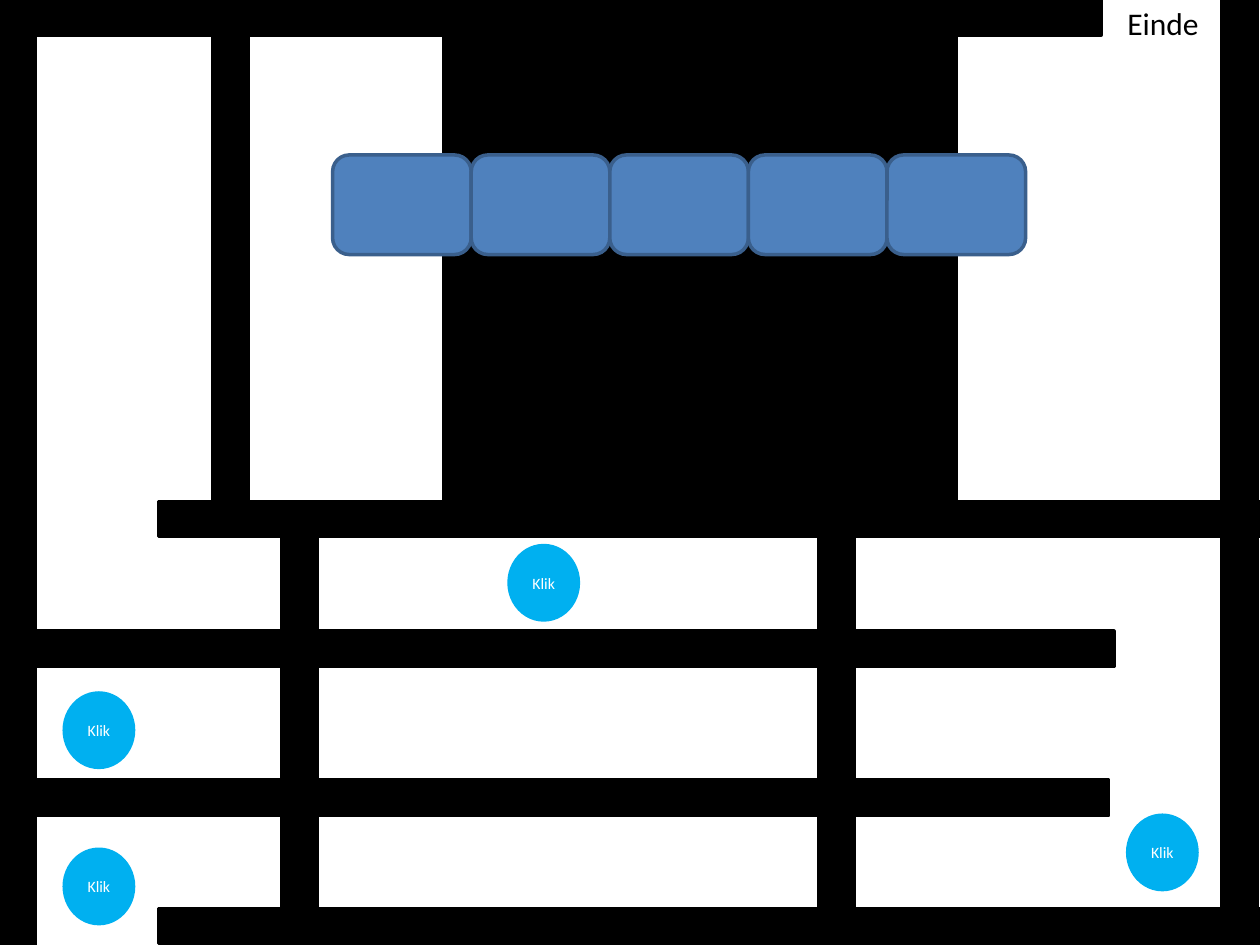
import pptx
import pptx.util
import pptx.dml.color
import pptx.enum.shapes
import pptx.enum.text

Inches = pptx.util.Inches
SHAPE = pptx.enum.shapes.MSO_SHAPE

COLORS = {"wall": "000000", "floor": "FFFFFF", "button": "00B0F0",
          "tile": "4F81BD", "tile_line": "3A5F8C"}

# Maze content: positions in inches
THICK = 0.28
LONG = 8.74
HALL_WALLS = [(0, 0), (1.26, 7.21), (0.06, 6.19), (0.1, 5.01), (1.26, 3.98)]  # left, top
UPRIGHT_WALLS = [(0, 0, 7.5), (9.7, 0, 7.5), (2.24, 3.99, 3.51),
                 (6.5, 4.12, 3.37), (1.69, 0.01, 3.98)]  # left, top, height
BLOCK = (3.52, 0.27, 4.07, 3.72)
EXIT = (8.8, 0.01, 0.86, 0.35)
BUTTONS = [(4.04, 4.33), (0.51, 5.5), (0.51, 6.74), (8.95, 6.47)]
BUTTON_SIZE = (0.55, 0.59)
TILE_COUNT, TILE_LEFT, TILE_TOP = 5, 2.64, 1.23
TILE_SIZE = (1.1, 0.79)


def rgb(name):
    return pptx.dml.color.RGBColor.from_string(COLORS[name])


def add_shape(kind, box, fill, line=None):
    sp = s.shapes.add_shape(kind, *[Inches(v) for v in box])
    sp.shadow.inherit = False
    sp.fill.solid()
    sp.fill.fore_color.rgb = rgb(fill)
    sp.line.color.rgb = rgb(line or fill)
    sp.line.width = pptx.util.Pt(2)
    return sp


def add_text(sp, text, size, color):
    tf = sp.text_frame
    tf.margin_left = tf.margin_right = tf.margin_top = tf.margin_bottom = 0
    tf.word_wrap = False
    tf.vertical_anchor = pptx.enum.text.MSO_ANCHOR.MIDDLE
    p = tf.paragraphs[0]
    p.alignment = pptx.enum.text.PP_ALIGN.CENTER
    r = p.add_run()
    r.text = text
    r.font.name = "Calibri"
    r.font.size = pptx.util.Pt(size)
    r.font.color.rgb = rgb(color)


prs = pptx.Presentation()
prs.slide_width, prs.slide_height = Inches(10), Inches(7.5)
s = prs.slides.add_slide(prs.slide_layouts[6])

# Exit label
add_text(add_shape(SHAPE.RECTANGLE, EXIT, "floor"), "Einde", size=18, color="wall")

# Walls
walls = [(x, y, LONG, THICK) for x, y in HALL_WALLS]
walls += [(x, y, THICK, h) for x, y, h in UPRIGHT_WALLS]
for box in walls + [BLOCK]:
    add_shape(SHAPE.RECTANGLE, box, "wall")

# Click buttons
for pos in BUTTONS:
    sp = add_shape(SHAPE.OVAL, pos + BUTTON_SIZE, "button")
    add_text(sp, "Klik", size=9, color="floor")

# Row of touching tiles
for i in range(TILE_COUNT):
    box = (TILE_LEFT + i * TILE_SIZE[0], TILE_TOP) + TILE_SIZE
    add_shape(SHAPE.ROUNDED_RECTANGLE, box, "tile", line="tile_line")

prs.save("out.pptx")
